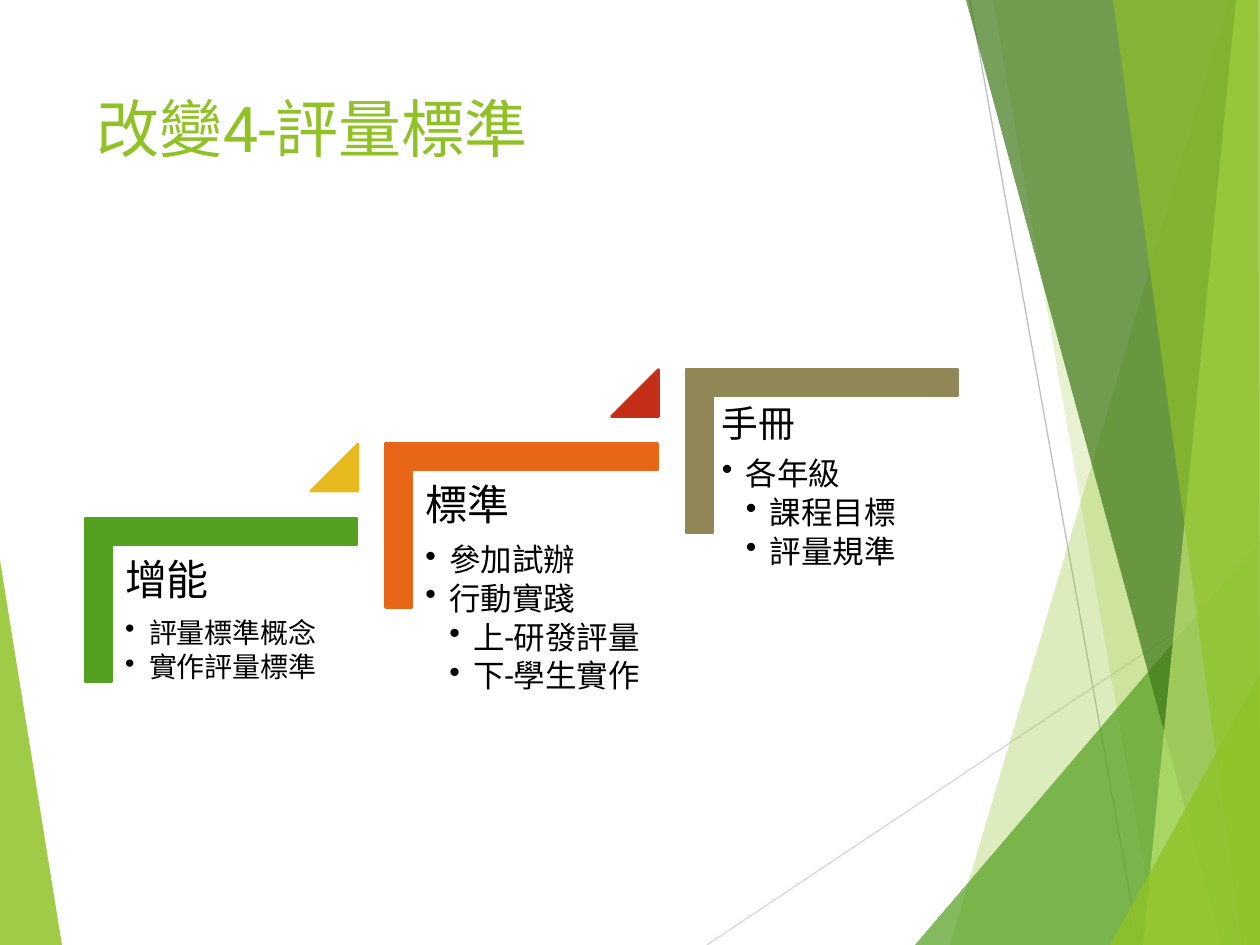
from pptx import Presentation
from pptx.dml.color import RGBColor
from pptx.enum.shapes import MSO_CONNECTOR, MSO_SHAPE
from pptx.enum.text import MSO_ANCHOR, MSO_AUTO_SIZE, PP_ALIGN
from pptx.oxml.ns import qn
from pptx.util import Emu, Pt
from lxml import etree

LINE = MSO_CONNECTOR.STRAIGHT
CORNER, TRIANGLE = MSO_SHAPE.CORNER, MSO_SHAPE.RIGHT_TRIANGLE
TRIANGLE = MSO_SHAPE.ISOSCELES_TRIANGLE
TOP, LEFT, NO_FIT = MSO_ANCHOR.TOP, PP_ALIGN.LEFT, MSO_AUTO_SIZE.NONE

FONT = "Roboto"
SCALE = 914400 // 126
W, H = 1260, 945

TITLE = "改變4-評量標準"
LEFT_FACET = ("90C226", 85, [(0, 560), (62, H), (0, H)])
RAYS = [("D9D9D9", (707, H), (W, 576)), ("BFBFBF", (970, 0), (1139, H))]
FACETS = [
    ("90C226", 30, [(1229, 0), (950, H), (W, H), (W, 0)]),
    ("90C226", 20, [(993, 0), (1158, H), (W, H), (W, 0)]),
    ("54A021", 72, [(915, H), (W, 541), (W, H)]),
    ("3F7819", 70, [(966, 0), (1222, H), (W, H), (W, 0)]),
    ("C0E474", 70, [(1236, 0), (1143, H), (W, H), (W, 0)]),
    ("90C226", 65, [(1113, 0), (1242, H), (W, H), (1258, 0)]),
    ("90C226", 80, [(1110, H), (W, 674), (W, H)]),
]
STEPS = [
    dict(head="增能", color="54A021", flag="E6B91E", head_size=24, size=16, inset=13,
         items=[(1, "評量標準概念"), (1, "實作評量標準")]),
    dict(head="標準", color="E76618", flag="C42F1A", head_size=24, size=18, inset=13,
         items=[(1, "參加試辦"), (1, "行動實踐"), (2, "上-研發評量"), (2, "下-學生實作")]),
    dict(head="手冊", color="918655", flag=None, head_size=21, size=18, inset=9,
         items=[(1, "各年級"), (2, "課程目標"), (2, "評量規準")]),
]
STEP_X, STEP_Y = 300.5, -74.5
INDENT = 24


def px(n):
    return Emu(round(n * SCALE))


def box(*values):
    return [px(v) for v in values]


def rgb(color):
    return RGBColor.from_string(color)


def facet(s, color, alpha, points):
    builder = s.shapes.build_freeform(*points[0], scale=SCALE)
    builder.add_line_segments(points[1:], close=True)
    sp = builder.convert_to_shape()
    sp.shadow.inherit = False
    sp.fill.solid()
    sp.fill.fore_color.rgb = rgb(color)
    sp.line.fill.background()
    clr = sp.fill._xPr.find(qn("a:solidFill"))[0]
    etree.SubElement(clr, qn("a:alpha"), val=str(alpha * 1000))


def ray(s, color, start, end):
    c = s.shapes.add_connector(LINE, *box(*start, *end))
    c.line.color.rgb = rgb(color)
    c.line.width = Pt(0.75)
    etree.SubElement(c._element.spPr, qn("a:effectLst"))


def solid(s, kind, color, frame, adjustments, rotation=0):
    sp = s.shapes.add_shape(kind, *box(*frame))
    sp.shadow.inherit = False
    sp.rotation = rotation
    for i, value in enumerate(adjustments):
        sp.adjustments[i] = value
    sp.fill.solid()
    sp.fill.fore_color.rgb = rgb(color)
    sp.line.color.rgb = rgb(color)
    sp.line.width = Pt(1.5)


def frame_text(tf, inset):
    values = dict(word_wrap=True, auto_size=NO_FIT, vertical_anchor=TOP)
    for side in ("left", "top", "right", "bottom"):
        values["margin_" + side] = px(inset)
    for name, value in values.items():
        setattr(tf, name, value)


def write(p, text, size, color):
    p.alignment = LEFT
    r = p.add_run()
    r.text = text
    for name, value in dict(name=FONT, size=Pt(size)).items():
        setattr(r.font, name, value)
    r.font.color.rgb = rgb(color)


def step_text(s, step, frame):
    tf = s.shapes.add_textbox(*box(*frame)).text_frame
    frame_text(tf, step["inset"])
    for i, (level, text) in enumerate([(0, step["head"])] + step["items"]):
        p = tf.add_paragraph() if i else tf.paragraphs[0]
        size = step["size"] if level else step["head_size"]
        write(p, text, size, "000000")
        p.level = level
        p.line_spacing = 0.9
        p.space_after = Pt(round(size * (0.15 if level else 0.35), 1))
        if level:
            pPr = p._p.get_or_add_pPr()
            pPr.set("marL", str(px(INDENT * level)))
            pPr.set("indent", str(px(-INDENT)))
            etree.SubElement(pPr, qn("a:buChar"), char="•")


def main():
    prs = Presentation()
    prs.slide_width, prs.slide_height = box(W, H)
    s = prs.slides.add_slide(prs.slide_layouts[5])

    title = s.shapes.title
    title.left, title.top, title.width, title.height = box(84, 84, 875, 181)
    frame_text(title.text_frame, 13)
    title.text_frame.margin_top = title.text_frame.margin_bottom = px(6)
    write(title.text_frame.paragraphs[0], TITLE, 36, "90C226")

    facet(s, *LEFT_FACET)
    for line in RAYS:
        ray(s, *line)
    for shape in FACETS:
        facet(s, *shape)

    for i, step in enumerate(STEPS):
        x, y = 139 + i * STEP_X, 464 + i * STEP_Y
        solid(s, CORNER, step["color"], (x, y, 164, 272), (0.161, 0.161), 90)
        step_text(s, step, (x - 27, y + 82, 246, 215))
        if step["flag"]:
            solid(s, TRIANGLE, step["flag"], (x + 172, y - 20, 47, 47), (1,))

    prs.save("out.pptx")


if __name__ == "__main__":
    main()
